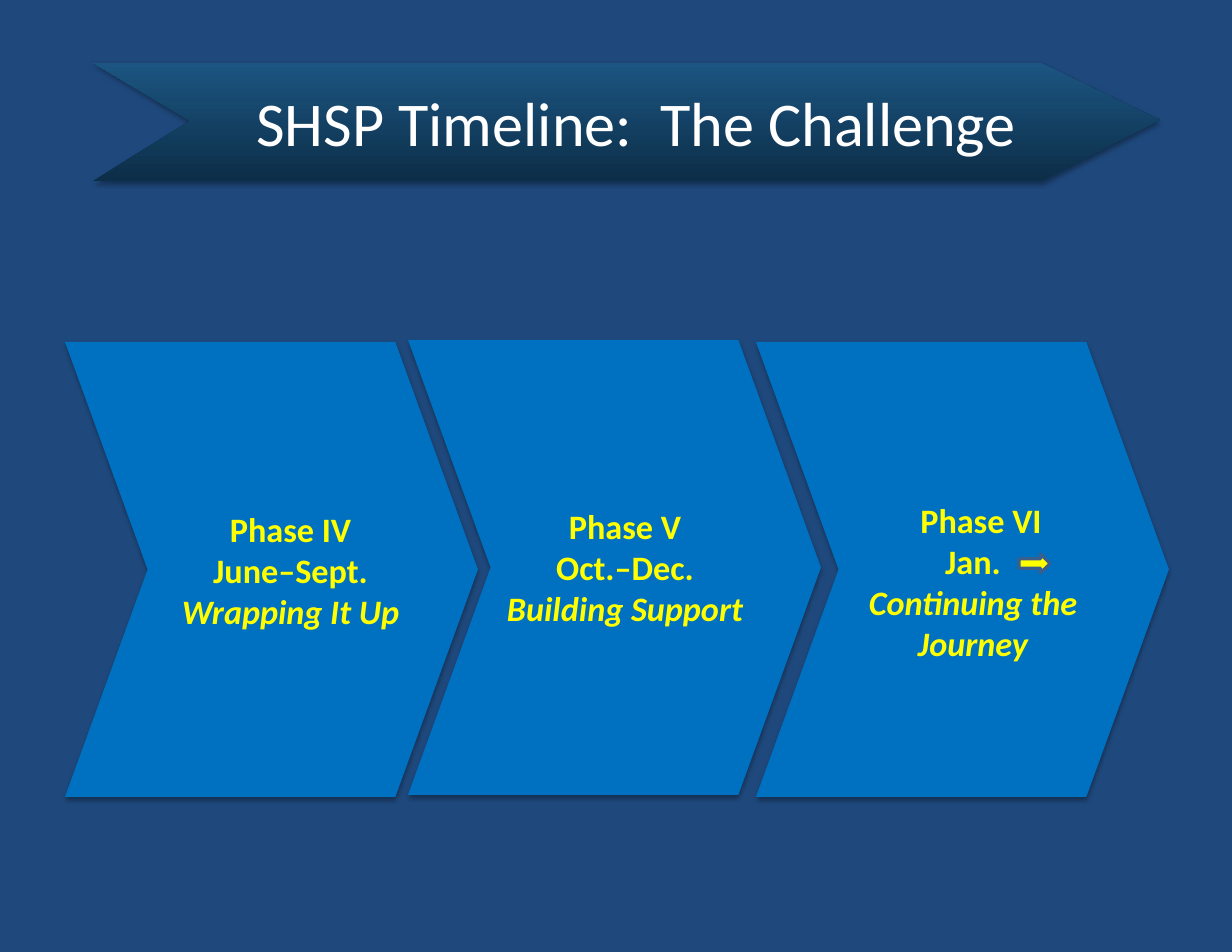
from lxml import etree
from pptx import Presentation
from pptx import util as u
from pptx.dml.color import RGBColor
from pptx.enum import shapes, text
from pptx.oxml.ns import qn

PX = 914400 // 112
COLORS = {
    "background": "1F497D",
    "banner top": "1C5581",
    "banner bottom": "0C2E48",
    "chevron": "0070C0",
    "title": "FFFFFF",
    "accent": "FFFF00",
    "arrow line": "3A5F8C",
    "shadow": "000000",
}


def color(name):
    return RGBColor.from_string(COLORS[name])


def drop_shadow(shape):
    """Put a soft shadow straight below a shape and hide its outline."""
    shape.line.fill.background()
    shape.shadow.inherit = False
    effects = shape._element.spPr.find(qn("a:effectLst"))
    shadow = etree.SubElement(
        effects, qn("a:outerShdw"), blurRad=str(u.Pt(3.1)), dist=str(u.Pt(1.8)),
        dir="5400000", rotWithShape="0")
    tint = etree.SubElement(shadow, qn("a:srgbClr"), val=COLORS["shadow"])
    etree.SubElement(tint, qn("a:alpha"), val="35000")


deck = Presentation()
deck.slide_width, deck.slide_height = 1232 * PX, 952 * PX
page = deck.slides.add_slide(deck.slide_layouts[6])
page.background.fill.solid()
page.background.fill.fore_color.rgb = color("background")

# Title banner
outline = page.shapes.build_freeform(93, 63, scale=PX)
outline.add_line_segments(
    [(1041, 63), (1160, 120), (1042, 181), (93, 181), (190, 121)], close=True)
banner = outline.convert_to_shape()
banner.fill.gradient()
banner.fill.gradient_angle = 90
for stop, name in zip(banner.fill.gradient_stops, ("banner bottom", "banner top")):
    stop.color.rgb = color(name)
banner.fill.gradient_stops[0].position = 0
banner.fill.gradient_stops[1].position = 1
drop_shadow(banner)

title = page.shapes.add_textbox(82 * PX, 63 * PX, 1108 * PX, 118 * PX)
title.text_frame.word_wrap = True
title.text_frame.vertical_anchor = text.MSO_ANCHOR.MIDDLE
para = title.text_frame.paragraphs[0]
para.text = "SHSP Timeline:  The Challenge"
para.alignment = text.PP_ALIGN.CENTER
para.font.name, para.font.size = "Calibri", u.Pt(40)
para.font.color.rgb = color("title")

# Phases: chevron left and top, text left, top and width,
# then lines, each with its right margin
phases = [
    (65, 342, 155, 508, 279,
     [("Phase IV", 8), ("June–Sept.", 0), ("Wrapping It Up", 0)]),
    (408, 340, 432, 505, 386,
     [("Phase V", 0), ("Oct.–Dec.", 0), ("Building Support", 0)]),
    (756, 342, 832, 499, 298,
     [("Phase VI", 0), ("Jan.", 16), ("Continuing the Journey", 0)]),
]
for left, top, *_ in phases:
    chevron = page.shapes.add_shape(
        shapes.MSO_SHAPE.CHEVRON, left * PX, top * PX, 413 * PX, 455 * PX)
    chevron.adjustments[0] = 0.2
    chevron.fill.solid()
    chevron.fill.fore_color.rgb = color("chevron")
    drop_shadow(chevron)

for _, _, left, top, width, lines in phases:
    box = page.shapes.add_textbox(left * PX, top * PX, width * PX, 170 * PX)
    frame = box.text_frame
    frame.word_wrap = True
    frame.margin_top = frame.margin_bottom = 0
    for index, (line, margin) in enumerate(lines):
        para = frame.add_paragraph() if index else frame.paragraphs[0]
        para.text = line
        para.alignment = text.PP_ALIGN.CENTER
        para.font.name, para.font.size = "Calibri", u.Pt(22)
        para.font.bold = True
        para.font.italic = index == 2
        para.font.color.rgb = color("accent")
        if margin:
            para._p.get_or_add_pPr().set("marR", str(margin * PX))

arrow = page.shapes.add_shape(
    shapes.MSO_SHAPE.RIGHT_ARROW, 1019 * PX, 554 * PX, 31 * PX, 19 * PX)
arrow.shadow.inherit = False
arrow.fill.solid()
arrow.fill.fore_color.rgb = color("accent")
arrow.line.color.rgb = color("arrow line")
arrow.line.width = u.Pt(2)

deck.save("out.pptx")
